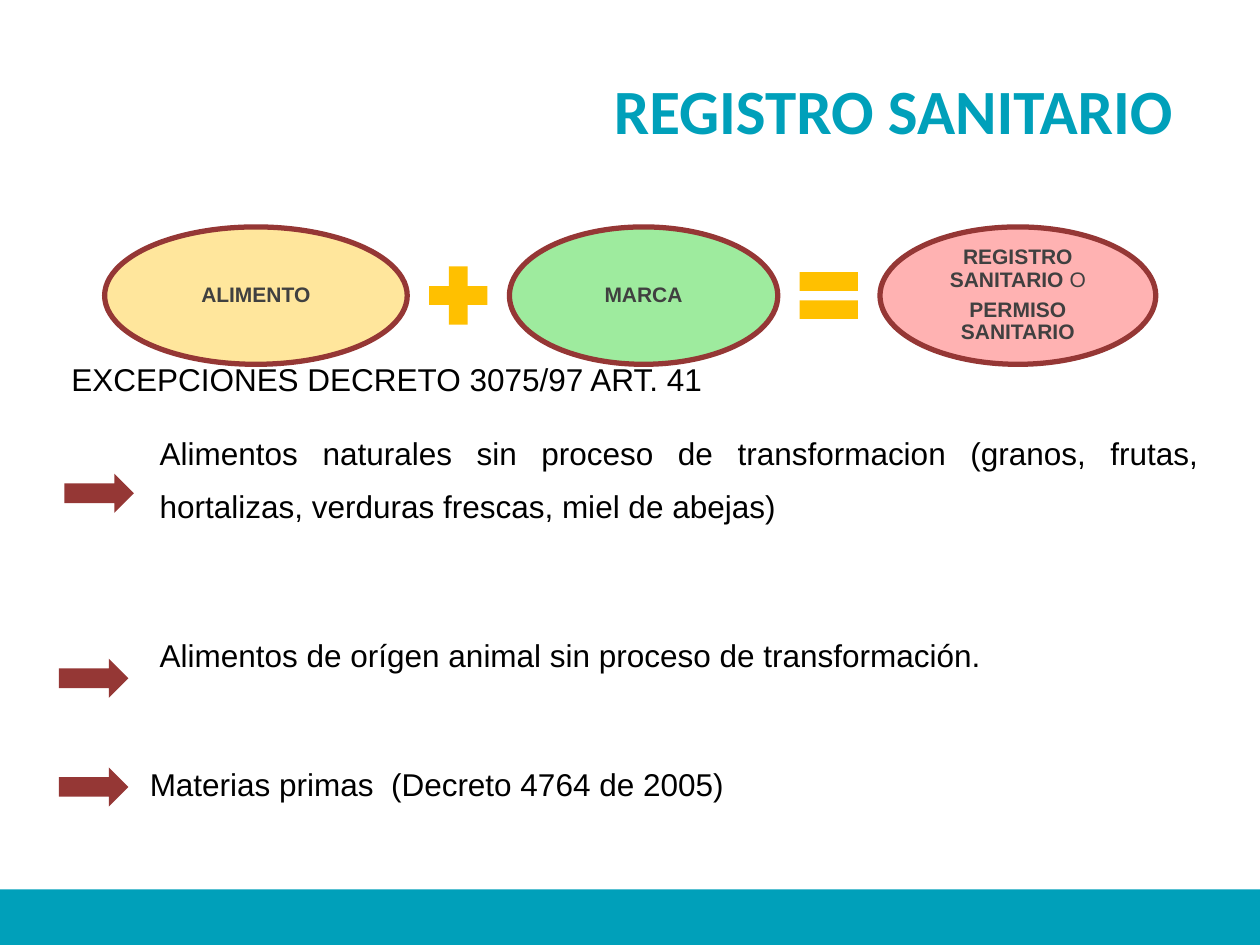
from lxml.etree import SubElement
from pptx import Presentation
from pptx.dml.color import RGBColor
from pptx.enum.shapes import MSO_SHAPE
from pptx.enum.text import MSO_ANCHOR, PP_ALIGN
from pptx.oxml.ns import qn
from pptx.util import Cm, Pt

# Content
TITLE = "REGISTRO SANITARIO"
HEADING = "EXCEPCIONES DECRETO 3075/97 ART. 41"
TEAL, MAROON, AMBER = "00A0BA", "953735", "FFC000"
GREY, BLACK = "404040", "000000"

# Equation terms: preset, width, fill, opacity %, paragraphs of (text, bold) runs
EQUATION = [
    (MSO_SHAPE.OVAL, 6.1, AMBER, 39, [[("ALIMENTO", True)]]),
    (MSO_SHAPE.MATH_PLUS, 1.6, AMBER, 100, []),
    (MSO_SHAPE.OVAL, 5.41, "00CC00", 38, [[("MARCA", True)]]),
    (MSO_SHAPE.MATH_EQUAL, 1.6, AMBER, 100, []),
    (MSO_SHAPE.OVAL, 5.56, "FF0000", 30,
     [[("REGISTRO SANITARIO ", True), ("O", False)], [("PERMISO SANITARIO", True)]]),
]
EQUATION_LEFT, EQUATION_MIDDLE, TERM_GAP = 2.11, 5.96, 0.23
OVAL_HEIGHT, OPERATOR_HEIGHT = 2.77, 1.6

# Exceptions: text, left, top, height, line spacing, arrow left, arrow top
EXCEPTIONS = [
    ("Alimentos naturales sin proceso de transformacion (granos, frutas, "
     "hortalizas, verduras frescas, miel de abejas)", 2.97, 8.33, 4.39, 1.4, 1.3, 9.55),
    ("Alimentos de orígen animal sin proceso de transformación.",
     2.97, 12.7, 2.29, 1.0, 1.19, 13.28),
    ("Materias primas  (Decreto 4764 de 2005)", 2.77, 15.29, 1.27, 1.0, 1.19, 15.47),
]
TEXT_WIDTH = 21.44


def rgb(value):
    return RGBColor.from_string(value)


def add_run(paragraph, text, size, color, bold=False, font="Arial"):
    run = paragraph.add_run()
    run.text = text
    run.font.name, run.font.size, run.font.bold = font, Pt(size), bold
    run.font.color.rgb = rgb(color)


def add_filled(preset, left, top, width, height, color, opacity=100):
    shape = slide.shapes.add_shape(preset, Cm(left), Cm(top), Cm(width), Cm(height))
    shape.shadow.inherit = False
    shape.fill.solid()
    shape.fill.fore_color.rgb = rgb(color)
    shape.line.fill.background()
    if opacity < 100:
        tint = shape.fill._xPr.find(qn("a:solidFill"))[0]
        SubElement(tint, qn("a:alpha"), val=str(opacity * 1000))
    return shape


def add_text(text, left, top, height, align, spacing=1.0):
    box = slide.shapes.add_textbox(Cm(left), Cm(top), Cm(TEXT_WIDTH), Cm(height))
    box.text_frame.word_wrap = True
    paragraph = box.text_frame.paragraphs[0]
    paragraph.alignment, paragraph.line_spacing = align, spacing
    add_run(paragraph, text, 18, BLACK)


def label_oval(oval, paragraphs):
    oval.line.color.rgb = rgb(MAROON)
    oval.line.width = Pt(3)
    frame = oval.text_frame
    frame.word_wrap, frame.vertical_anchor = True, MSO_ANCHOR.MIDDLE
    frame.margin_left = frame.margin_right = Cm(0.05)
    frame.margin_top = frame.margin_bottom = Cm(0.05)
    for index, runs in enumerate(paragraphs):
        paragraph = frame.add_paragraph() if index else frame.paragraphs[0]
        paragraph.alignment = PP_ALIGN.CENTER
        paragraph.line_spacing, paragraph.space_after = 0.9, Pt(4)
        for text, bold in runs:
            add_run(paragraph, text, 12, GREY, bold)


presentation = Presentation()
presentation.slide_width, presentation.slide_height = Cm(25.4), Cm(19.05)
slide = presentation.slides.add_slide(presentation.slide_layouts[5])

# Footer band and title
add_filled(MSO_SHAPE.RECTANGLE, 0, 17.93, 25.4, 1.12, TEAL)
title = slide.shapes.title
title.left, title.top, title.width, title.height = Cm(10.9), Cm(1.32), Cm(14.22), Cm(1.75)
title.text_frame.vertical_anchor = MSO_ANCHOR.TOP
title_line = title.text_frame.paragraphs[0]
title_line.alignment = PP_ALIGN.CENTER
title_line.space_before = Pt(0)
add_run(title_line, TITLE, 36, TEAL, True, "Calibri")

# Equation, laid out left to right
left = EQUATION_LEFT
for preset, width, color, opacity, paragraphs in EQUATION:
    height = OVAL_HEIGHT if paragraphs else OPERATOR_HEIGHT
    term = add_filled(preset, left, EQUATION_MIDDLE - height / 2, width, height, color, opacity)
    if paragraphs:
        label_oval(term, paragraphs)
    left += width + TERM_GAP

# Exceptions, each with its arrow
add_text(HEADING, 1.19, 7.14, 1.27, PP_ALIGN.LEFT)
for text, text_left, text_top, height, spacing, arrow_left, arrow_top in EXCEPTIONS:
    add_filled(MSO_SHAPE.RIGHT_ARROW, arrow_left, arrow_top, 1.4, 0.79, MAROON)
    add_text(text, text_left, text_top, height, PP_ALIGN.JUSTIFY, spacing)

presentation.save("out.pptx")
